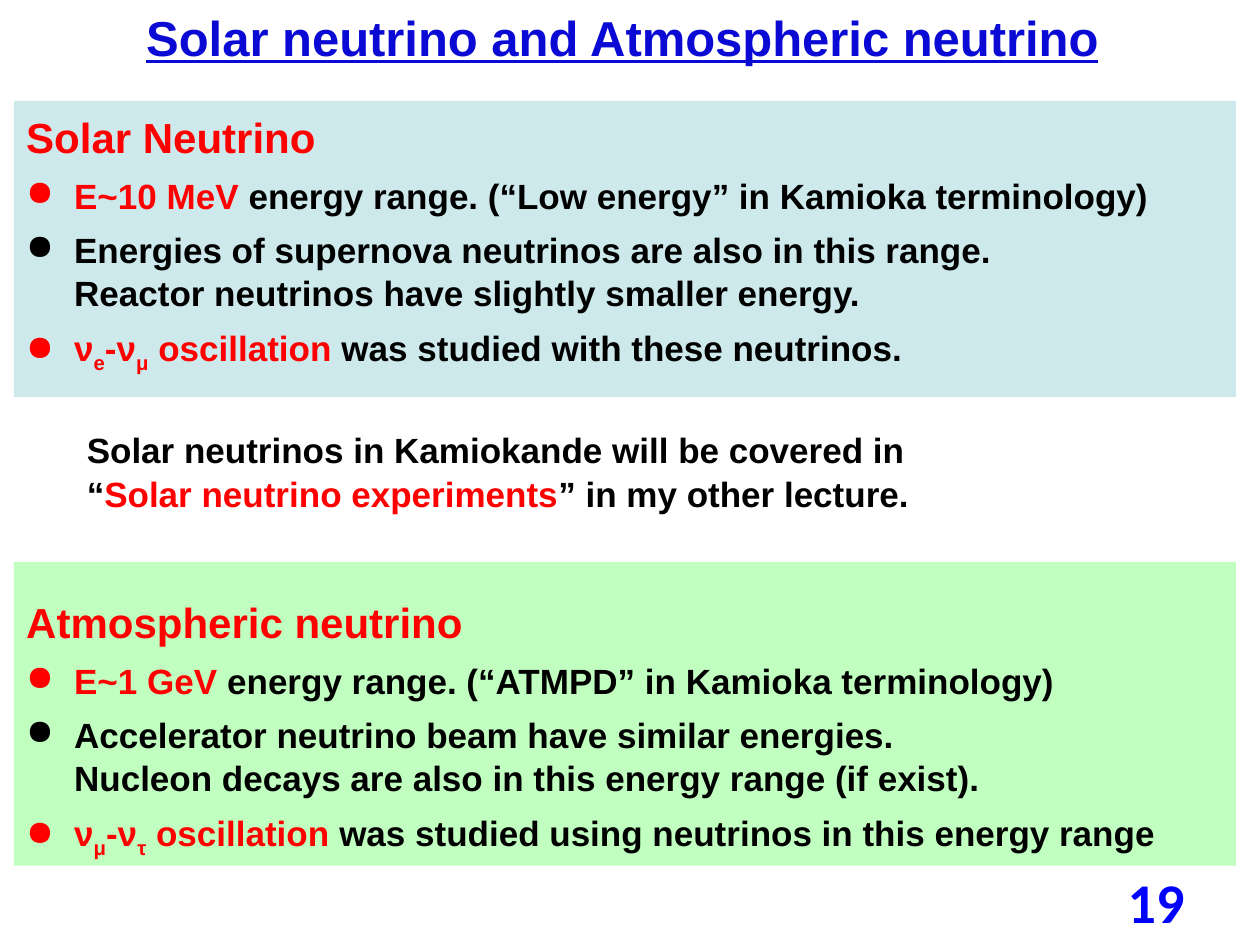
import pptx
import pptx.util
import pptx.dml.color
import pptx.enum.shapes
import pptx.enum.text
from lxml import etree
from pptx.util import Inches, Pt

RED, BLACK = "FF0000", "000000"
LINE_SPACING = 1.04
BULLET_INDENT = 0.38

# Each paragraph is a list of (text, colour) spans; a third item marks a subscript.
PANELS = [
    {
        "fill": "CDE9EB", "top": 0.8, "height": 2.35, "text_top": 0.82,
        "heading": "Solar Neutrino",
        "bullets": [
            [("E~10 MeV ", RED),
             ("energy range. (“Low energy” in Kamioka terminology)", BLACK)],
            [("Energies of supernova neutrinos are also in this range.\n"
              "Reactor neutrinos have slightly smaller energy.", BLACK)],
            [("ν", RED), ("e", RED, "sub"), ("-ν", RED), ("μ", RED, "sub"),
             (" oscillation ", RED), ("was studied with these neutrinos.", BLACK)],
        ],
    },
    {
        "fill": "C1FFC1", "top": 4.46, "height": 2.41, "text_top": 4.67,
        "heading": "Atmospheric neutrino",
        "bullets": [
            [("E~1 GeV ", RED),
             ("energy range. (“ATMPD” in Kamioka terminology)", BLACK)],
            [("Accelerator neutrino beam have similar energies.\n"
              "Nucleon decays are also in this energy range (if exist).", BLACK)],
            [("ν", RED), ("μ", RED, "sub"), ("-ν", RED), ("τ", RED, "sub"),
             (" oscillation ", RED),
             ("was studied using neutrinos in this energy range", BLACK)],
        ],
    },
]
TITLE = [("Solar neutrino and Atmospheric neutrino", "0A0AD4")]
LECTURE_NOTE = [
    ("Solar neutrinos in Kamiokande will be covered in\n“", BLACK),
    ("Solar neutrino experiments", RED),
    ("” in my other lecture.", BLACK),
]
PAGE_NUMBER = [("19", "0000FF")]


def rgb(value):
    return pptx.dml.color.RGBColor.from_string(value)


def add_panel(page, top, height, fill):
    panel = page.shapes.add_shape(
        pptx.enum.shapes.MSO_SHAPE.RECTANGLE,
        Inches(0.11), Inches(top), Inches(9.7), Inches(height))
    panel.shadow.inherit = False
    panel.fill.solid()
    panel.fill.fore_color.rgb = rgb(fill)
    panel.line.fill.background()


def add_box(page, left, top, width, height):
    box = page.shapes.add_textbox(
        Inches(left), Inches(top), Inches(width), Inches(height))
    box.text_frame.word_wrap = True
    return box.text_frame


def add_bullet(para):
    properties = para._p.get_or_add_pPr()
    properties.set("marL", str(Inches(BULLET_INDENT)))
    properties.set("indent", str(-Inches(BULLET_INDENT)))
    bullet = etree.SubElement(properties, pptx.oxml.ns.qn("a:buChar"))
    bullet.set("char", "●")


def write(para, spans, size, font="Arial"):
    """Fill a paragraph with coloured bold spans; a newline is a line break."""
    para.font.name = font
    para.font.size = Pt(size)
    para.font.bold = True
    for text, colour, *subscript in spans:
        for number, line in enumerate(text.split("\n")):
            if number:
                para.add_line_break()
            span = para.add_run()
            span.text = line
            span.font.color.rgb = rgb(colour)
            if subscript:
                span.font._element.set("baseline", "-25000")


deck = pptx.Presentation()
deck.slide_width, deck.slide_height = Inches(10), Inches(7.5)
page = deck.slides.add_slide(deck.slide_layouts[6])

title = add_box(page, 0.57, 0.01, 8.74, 0.57).paragraphs[0]
title.alignment = pptx.enum.text.PP_ALIGN.CENTER
write(title, TITLE, 28)
title.font.underline = True

for panel in PANELS:
    add_panel(page, panel["top"], panel["height"], panel["fill"])
    frame = add_box(page, 0.11, panel["text_top"], 9.81, 2.2)
    heading = frame.paragraphs[0]
    heading.space_after = Pt(6)
    heading.line_spacing = LINE_SPACING
    write(heading, [(panel["heading"], RED)], 24)
    for spans in panel["bullets"]:
        para = frame.add_paragraph()
        para.space_after = Pt(6)
        para.line_spacing = LINE_SPACING
        add_bullet(para)
        write(para, spans, 20)

note = add_box(page, 0.59, 3.34, 7.78, 0.77).paragraphs[0]
note.line_spacing = LINE_SPACING
write(note, LECTURE_NOTE, 20)

number_frame = add_box(page, 7.17, 6.95, 2.33, 0.4)
number_frame.vertical_anchor = pptx.enum.text.MSO_ANCHOR.MIDDLE
number = number_frame.paragraphs[0]
number.alignment = pptx.enum.text.PP_ALIGN.RIGHT
write(number, PAGE_NUMBER, 32, "Calibri")

deck.save("out.pptx")
